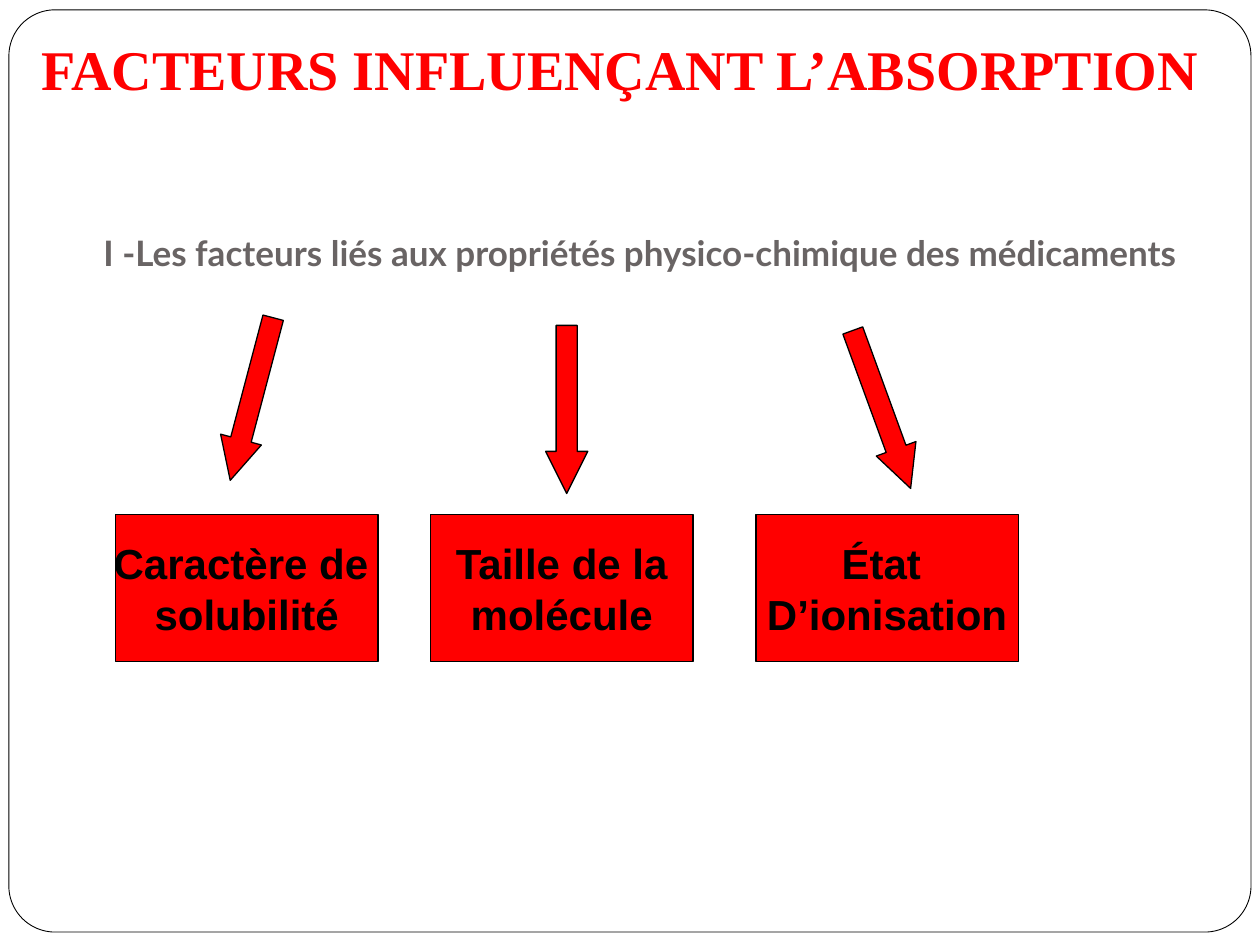
from pptx import Presentation
from pptx import util as u
from pptx.dml.color import RGBColor
from pptx.enum import shapes, text

RED = RGBColor(0xFF, 0x00, 0x00)
BLACK = RGBColor(0x00, 0x00, 0x00)
WHITE = RGBColor(0xFF, 0xFF, 0xFF)
GREY = RGBColor(0x69, 0x64, 0x64)

# Content
HEADING = "FACTEURS INFLUENÇANT L’ABSORPTION"
SUBTITLE = "I -Les facteurs liés aux propriétés physico-chimique des médicaments"
# Lines of text, box left (cm), arrow top (cm), arrow rotation (degrees)
FACTORS = [
    (["Caractère de ", "solubilité"], 2.33, 6.35, 14.8),
    (["Taille de la", "molécule"], 8.68, 6.56, 0),
    (["État ", "D’ionisation"], 15.24, 6.56, 339.9),
]

# Geometry (cm)
BOX_TOP, BOX_WIDTH, BOX_HEIGHT = 10.37, 5.29, 2.97
ARROW_LEFT, ARROW_STEP = 4.65, 6.35
ARROW_WIDTH, ARROW_HEIGHT = 0.85, 3.39


def add_run(paragraph, words, name, size, color):
    run = paragraph.add_run()
    run.text = words
    run.font.name = name
    run.font.size = u.Pt(size)
    run.font.bold = True
    run.font.color.rgb = color


def add_outlined(slide, kind, left, top, width, height, fill, line=0.75):
    shape = slide.shapes.add_shape(
        kind, u.Cm(left), u.Cm(top), u.Cm(width), u.Cm(height))
    shape.shadow.inherit = False
    shape.fill.solid()
    shape.fill.fore_color.rgb = fill
    shape.line.color.rgb = BLACK
    shape.line.width = u.Pt(line)
    return shape


def add_box(slide, lines, left):
    box = add_outlined(slide, shapes.MSO_SHAPE.RECTANGLE,
                       left, BOX_TOP, BOX_WIDTH, BOX_HEIGHT, RED)
    frame = box.text_frame
    frame.word_wrap = False
    frame.vertical_anchor = text.MSO_ANCHOR.MIDDLE
    for index, line in enumerate(lines):
        paragraph = frame.add_paragraph() if index else frame.paragraphs[0]
        paragraph.alignment = text.PP_ALIGN.CENTER
        add_run(paragraph, line, "Arial", 24, BLACK)


def add_arrow(slide, left, top, rotation):
    arrow = add_outlined(slide, shapes.MSO_SHAPE.DOWN_ARROW,
                         left, top, ARROW_WIDTH, ARROW_HEIGHT, RED)
    arrow.adjustments[0] = 0.5
    arrow.adjustments[1] = 1
    arrow.rotation = rotation


def main():
    presentation = Presentation()
    presentation.slide_width, presentation.slide_height = u.Cm(25.4), u.Cm(19.05)
    slide = presentation.slides.add_slide(presentation.slide_layouts[5])

    # Subtitle in the title placeholder
    title = slide.shapes.title
    title.left, title.top = u.Cm(1.83), u.Cm(2.59)
    title.width, title.height = u.Cm(23.57), u.Cm(3.18)
    frame = title.text_frame
    frame.word_wrap = True
    frame.auto_size = text.MSO_AUTO_SIZE.NONE
    frame.vertical_anchor = text.MSO_ANCHOR.BOTTOM
    frame.margin_bottom = u.Cm(0.25)
    frame.paragraphs[0].alignment = text.PP_ALIGN.LEFT
    add_run(frame.paragraphs[0], SUBTITLE, "Lato", 20, GREY)

    # Rounded border, behind everything
    border = add_outlined(slide, shapes.MSO_SHAPE.ROUNDED_RECTANGLE,
                          0.18, 0.2, 25.04, 18.59, WHITE, 0.5)
    border.adjustments[0] = 0.05
    title.element.addprevious(border.element)

    # Factor boxes, then the arrows pointing at them
    for lines, left, _, _ in FACTORS:
        add_box(slide, lines, left)
    for index, (_, _, top, rotation) in enumerate(FACTORS):
        add_arrow(slide, ARROW_LEFT + index * ARROW_STEP, top, rotation)

    # Main heading
    heading = slide.shapes.add_textbox(
        u.Cm(0.58), u.Cm(0.58), u.Cm(24.82), u.Cm(1.63))
    heading.text_frame.word_wrap = True
    heading.text_frame.auto_size = text.MSO_AUTO_SIZE.SHAPE_TO_FIT_TEXT
    add_run(heading.text_frame.paragraphs[0], HEADING, "Times New Roman", 32, RED)

    presentation.save("out.pptx")


if __name__ == "__main__":
    main()
